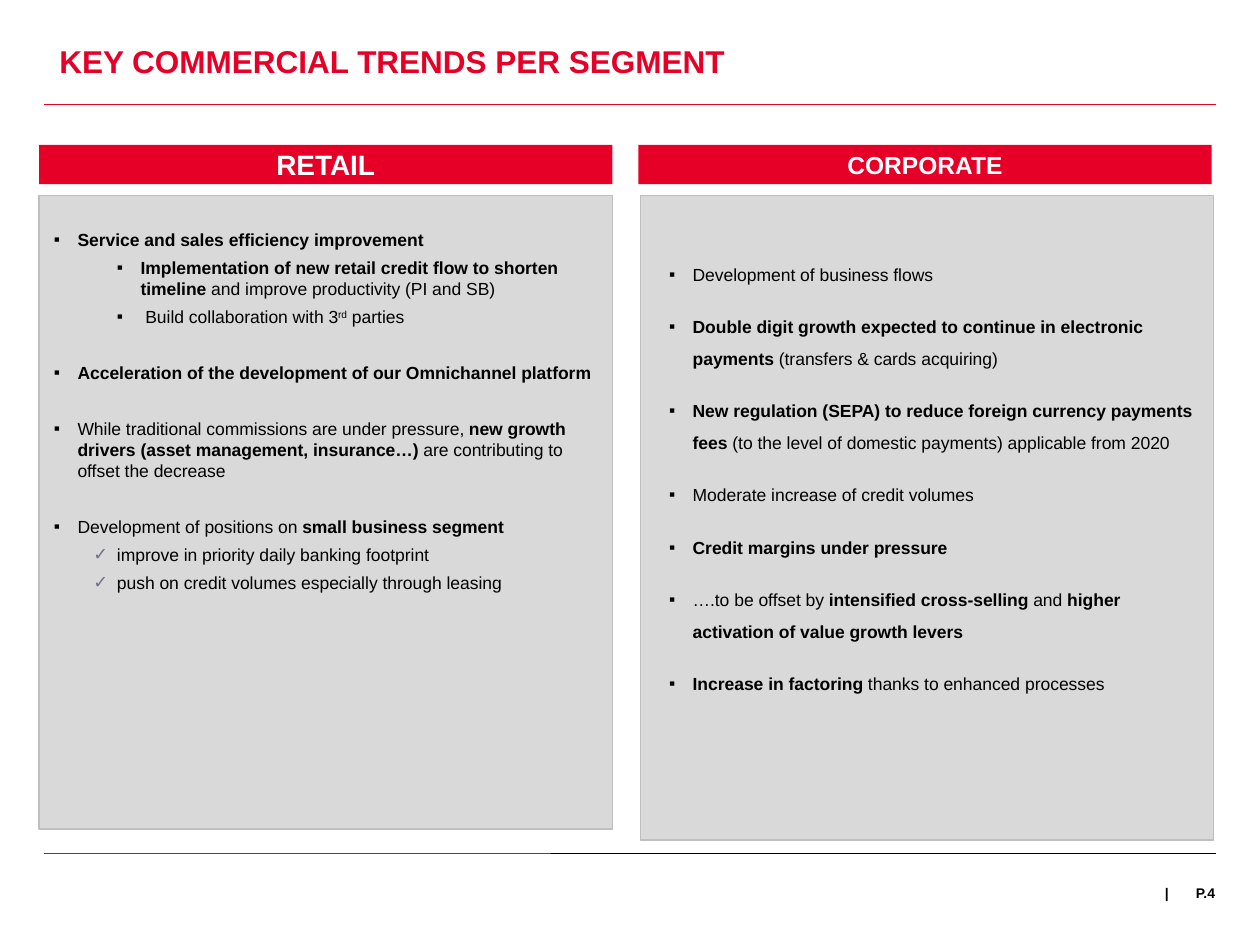
from dataclasses import dataclass

import lxml.etree
import pptx
import pptx.dml.color
import pptx.enum.shapes
import pptx.enum.text
import pptx.oxml.ns
import pptx.util

Pt = pptx.util.Pt
qn = pptx.oxml.ns.qn
Align = pptx.enum.text.PP_ALIGN
Anchor = pptx.enum.text.MSO_ANCHOR

COLORS = {
    "red": "E60028",
    "panel": "D9D9D9",
    "border": "BFBFBF",
    "check": "6E6E87",
    "black": "000000",
    "white": "FFFFFF",
}
FONT = "Arial"


@dataclass(frozen=True)
class Box:
    left: float
    top: float
    width: float
    height: float


@dataclass(frozen=True)
class Rule:
    start: float
    end: float
    y: float
    color: str


@dataclass(frozen=True)
class Style:
    level: int
    margin: float
    bullet: str = "▪"
    bullet_color: str = "black"
    line_spacing: float = 1.0


@dataclass(frozen=True)
class Item:
    """One bullet; ** toggles bold and ^ toggles superscript."""
    text: str
    style: Style
    gap: float


@dataclass(frozen=True)
class Segment:
    heading: str
    heading_size: float
    heading_box: Box
    panel_box: Box
    top_inset: float
    items: tuple[Item, ...]


MAIN = Style(0, 13.5)
SUB = Style(1, 49.5)
CHECK = Style(1, 36, "✓", "check")
WIDE = Style(1, 21.5, line_spacing=1.5)
HANGING = -13.5
NEAR, FAR = 4, 20

RETAIL = (
    Item("**Service and sales efficiency improvement**", MAIN, 0),
    Item("**Implementation of new retail credit flow to shorten timeline **"
         "and improve productivity (PI and SB)", SUB, NEAR),
    Item(" Build collaboration with 3^rd^ parties", SUB, NEAR),
    Item("**Acceleration of the development of our Omnichannel platform**", MAIN, FAR),
    Item("While traditional commissions are under pressure, **new growth drivers "
         "(asset management, insurance…) **are contributing to offset the decrease",
         MAIN, FAR),
    Item("Development of positions on **small business segment**", MAIN, FAR),
    Item("improve in priority daily banking footprint", CHECK, NEAR),
    Item("push on credit volumes especially through leasing", CHECK, NEAR),
)
CORPORATE_TEXTS = (
    "Development of business flows",
    "**Double digit growth expected to continue in electronic payments **"
    "(transfers & cards acquiring)",
    "**New regulation (SEPA) to reduce foreign currency payments fees **"
    "(to the level of domestic payments) applicable from 2020",
    "Moderate increase of credit volumes",
    "**Credit margins under pressure**",
    "….to be offset by **intensified cross-selling **and "
    "**higher activation of value growth levers**",
    "**Increase in factoring **thanks to enhanced processes",
)
CORPORATE = tuple(Item(text, WIDE, 12 if i else 0)
                  for i, text in enumerate(CORPORATE_TEXTS))

SEGMENTS = (
    Segment("RETAIL", 16, Box(22.3, 82.8, 327.6, 22.5),
            Box(22.3, 111.6, 327.6, 362.2), 19.25, RETAIL),
    Segment("CORPORATE", 14, Box(364.8, 82.8, 327.6, 22.5),
            Box(365.8, 111.6, 327.6, 368.4), 33, CORPORATE),
)
RULES = (
    Rule(25.2, 694.8, 59.5, "red"),
    Rule(25.2, 694.8, 487.5, "red"),
    Rule(314.6, 694.8, 487.5, "black"),
)


def rgb(name: str) -> pptx.dml.color.RGBColor:
    return pptx.dml.color.RGBColor.from_string(COLORS[name])


def apply(target, values: dict) -> None:
    for name, value in values.items():
        setattr(target, name, value)


def place(shape, box: Box) -> None:
    apply(shape, {name: Pt(getattr(box, name))
                  for name in ("left", "top", "width", "height")})


def format_frame(frame, insets: tuple, anchor=Anchor.TOP, wrap: bool = True) -> None:
    """Insets run left, top, right, bottom."""
    sides = ("margin_left", "margin_top", "margin_right", "margin_bottom")
    apply(frame, dict(zip(sides, map(Pt, insets))))
    apply(frame, {"auto_size": pptx.enum.text.MSO_AUTO_SIZE.NONE,
                  "vertical_anchor": anchor, "word_wrap": wrap})


def add_run(paragraph, text: str, size: float, color: str, bold: bool):
    run = paragraph.add_run()
    run.text = text
    apply(run.font, {"name": FONT, "size": Pt(size), "bold": bold})
    run.font.color.rgb = rgb(color)
    return run


def write_line(frame, text: str, size: float, color: str, align) -> None:
    paragraph = frame.paragraphs[0]
    apply(paragraph, {"alignment": align, "space_before": Pt(0)})
    add_run(paragraph, text, size, color, True)


def set_bullet(paragraph, style: Style) -> None:
    props = paragraph._p.get_or_add_pPr()
    props.set("marL", str(Pt(style.margin)))
    props.set("indent", str(Pt(HANGING)))
    color = lxml.etree.SubElement(props, qn("a:buClr"))
    lxml.etree.SubElement(color, qn("a:srgbClr"), val=COLORS[style.bullet_color])
    lxml.etree.SubElement(props, qn("a:buFont"), typeface=FONT)
    lxml.etree.SubElement(props, qn("a:buChar"), char=style.bullet)


def write_item(paragraph, item: Item) -> None:
    apply(paragraph, {"level": item.style.level, "alignment": Align.LEFT,
                      "line_spacing": item.style.line_spacing,
                      "space_before": Pt(item.gap)})
    set_bullet(paragraph, item.style)
    for i, weight_part in enumerate(item.text.split("**")):
        for j, part in enumerate(weight_part.split("^")):
            if part:
                run = add_run(paragraph, part, 10, "black", i % 2 == 1)
                if j % 2:
                    run.font._element.set("baseline", "30000")


def draw_segment(heading, panel, segment: Segment) -> None:
    place(heading, segment.heading_box)
    heading.fill.solid()
    heading.fill.fore_color.rgb = rgb("red")
    format_frame(heading.text_frame, (14.4, 0, 14.4, 0), Anchor.MIDDLE)
    write_line(heading.text_frame, segment.heading, segment.heading_size,
               "white", Align.CENTER)

    place(panel, segment.panel_box)
    panel.fill.solid()
    panel.fill.fore_color.rgb = rgb("panel")
    panel.line.color.rgb = rgb("border")
    panel.line.width = Pt(0.75)
    frame = panel.text_frame
    format_frame(frame, (8.5, segment.top_inset, 8.5, 3))
    for i, item in enumerate(segment.items):
        write_item(frame.add_paragraph() if i else frame.paragraphs[0], item)


def draw_rule(slide, rule: Rule) -> None:
    line = slide.shapes.add_connector(
        pptx.enum.shapes.MSO_CONNECTOR.STRAIGHT,
        Pt(rule.start), Pt(rule.y), Pt(rule.end), Pt(rule.y))
    line.line.color.rgb = rgb(rule.color)
    line.line.width = Pt(0.5)
    lxml.etree.SubElement(line._element.spPr, qn("a:effectLst"))


def draw_footer(slide, text: str, box: Box, align, wrap: bool) -> None:
    footer = slide.shapes.add_textbox(0, 0, 0, 0)
    place(footer, box)
    format_frame(footer.text_frame, (0, 0, 0, 0), wrap=wrap)
    write_line(footer.text_frame, text, 8, "black", align)


def main() -> None:
    deck = pptx.Presentation()
    apply(deck, {"slide_width": Pt(720), "slide_height": Pt(540)})
    comparison_layout = deck.slide_layouts[4]
    slide = deck.slides.add_slide(comparison_layout)
    title, *parts = slide.placeholders

    place(title, Box(31, 23.8, 663.8, 21.6))
    format_frame(title.text_frame, (2.9, 0, 2.9, 0))
    write_line(title.text_frame, "KEY COMMERCIAL TRENDS PER SEGMENT", 18, "red", Align.LEFT)

    for heading, panel, segment in zip(parts[::2], parts[1::2], SEGMENTS):
        draw_segment(heading, panel, segment)
    for rule in RULES:
        draw_rule(slide, rule)
    draw_footer(slide, "|", Box(663.8, 505.4, 5.8, 34.6), Align.CENTER, False)
    draw_footer(slide, "P.4", Box(666, 505.4, 28.4, 34.6), Align.RIGHT, True)
    deck.save("out.pptx")


if __name__ == "__main__":
    main()
